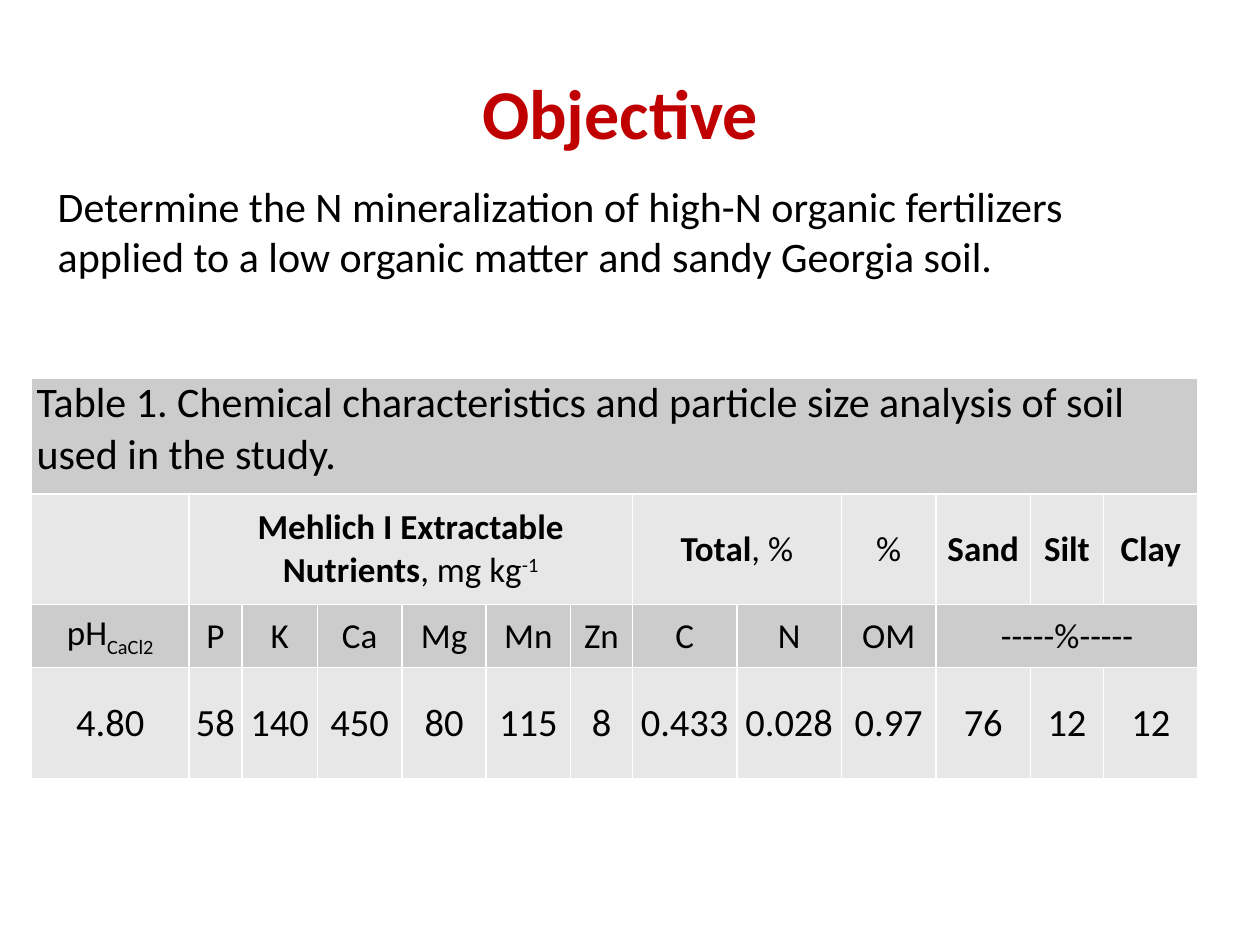
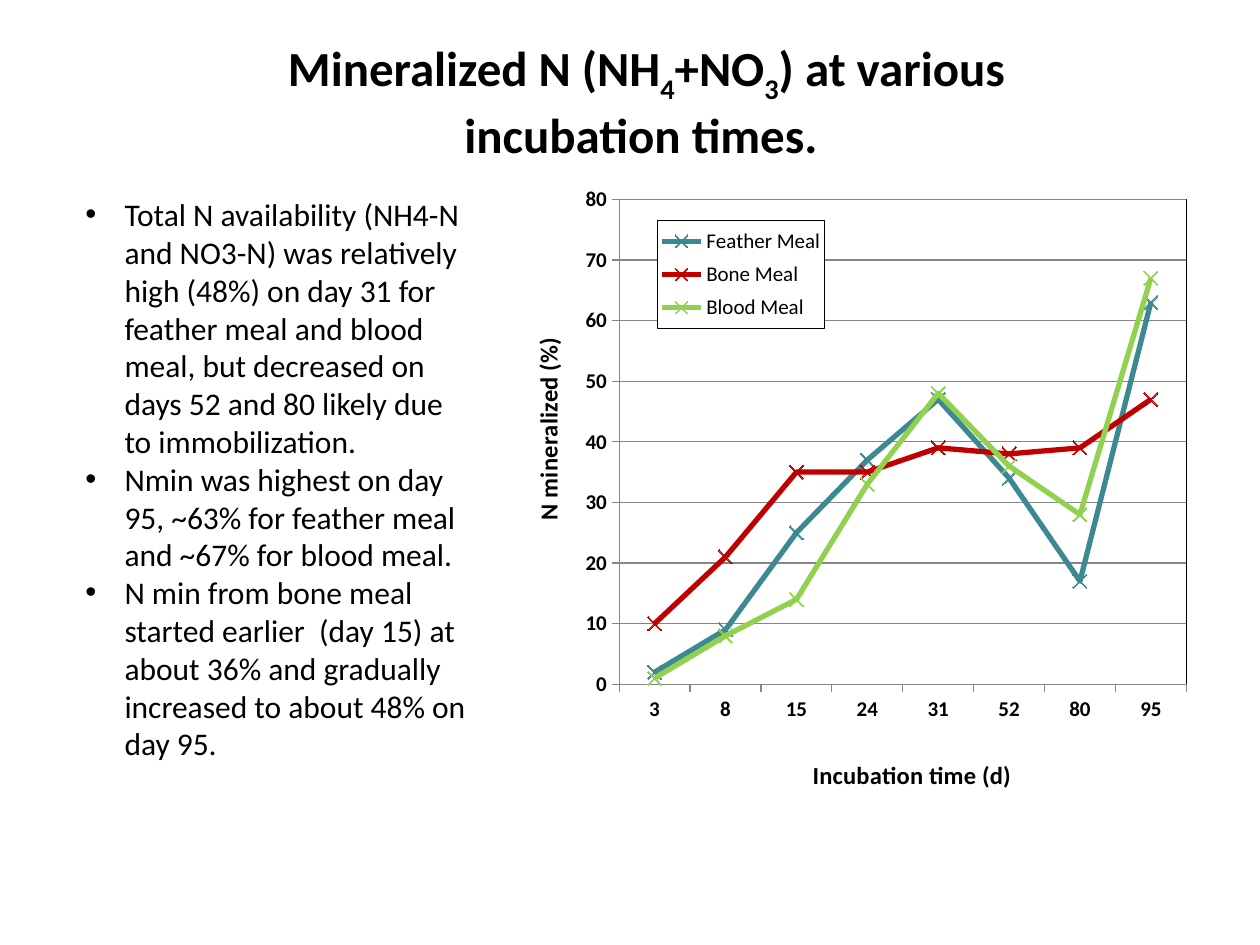
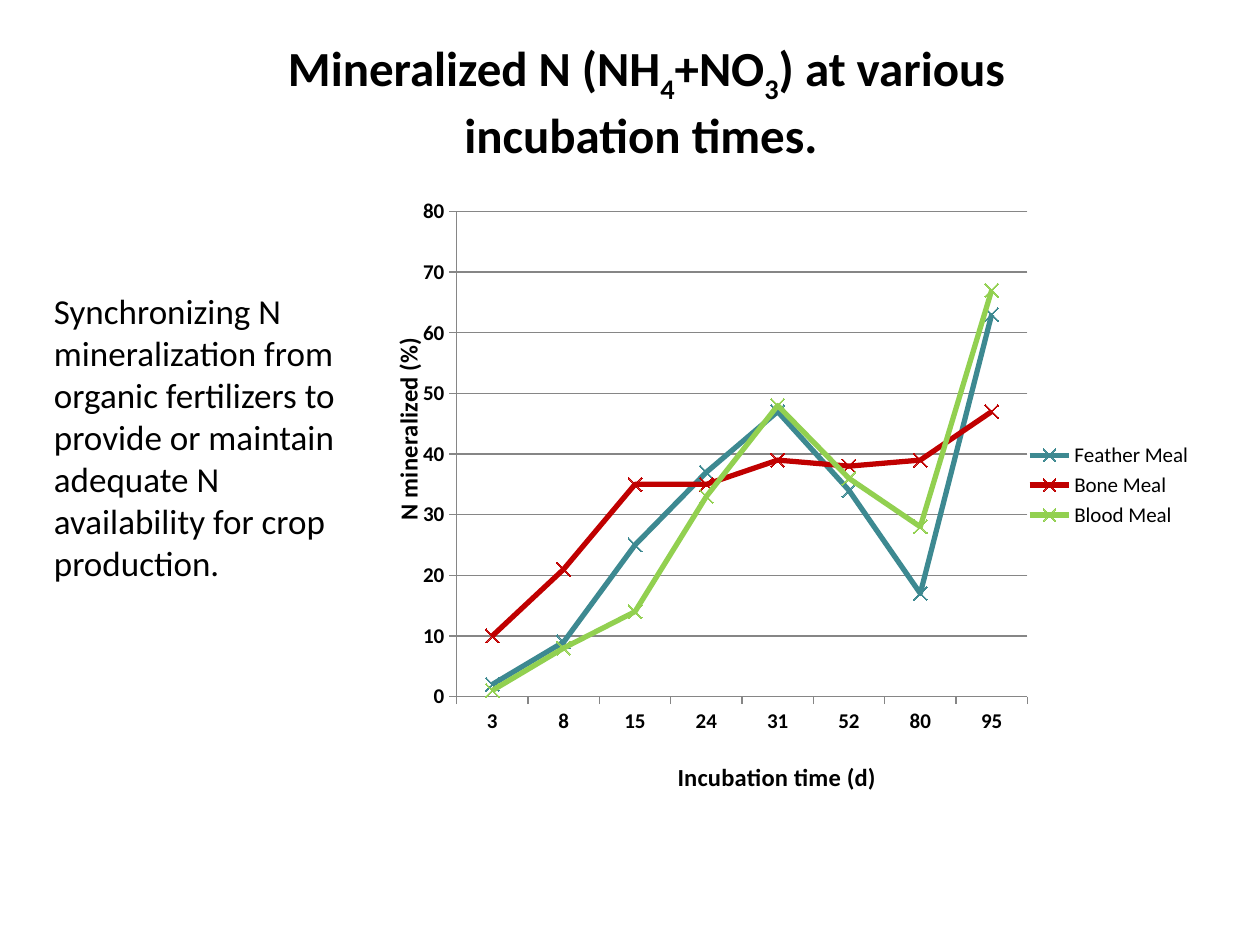
from dataclasses import dataclass
from typing import NamedTuple, Optional

from lxml import etree
from pptx import Presentation
from pptx.chart.data import CategoryChartData
from pptx.dml.color import RGBColor
from pptx.enum.chart import XL_CHART_TYPE, XL_LEGEND_POSITION, XL_MARKER_STYLE, XL_TICK_MARK
from pptx.enum.text import MSO_ANCHOR, MSO_AUTO_SIZE, PP_ALIGN
from pptx.oxml import parse_xml
from pptx.oxml.ns import qn
from pptx.util import Emu, Pt

PX = 9144  # 100 px to the inch
LINE_MARKERS = XL_CHART_TYPE.LINE_MARKERS
LEGEND_RIGHT = XL_LEGEND_POSITION.RIGHT
MARKER_X = XL_MARKER_STYLE.X
TICK_OUT, TICK_NONE = XL_TICK_MARK.OUTSIDE, XL_TICK_MARK.NONE
TOP, MIDDLE = MSO_ANCHOR.TOP, MSO_ANCHOR.MIDDLE
LEFT, CENTER = PP_ALIGN.LEFT, PP_ALIGN.CENTER
NO_AUTOFIT = MSO_AUTO_SIZE.NONE
TITLE_ONLY = 5
SUB, SUPER = -25, 30
NS = ('xmlns:a="http://schemas.openxmlformats.org/drawingml/2006/main" '
      'xmlns:c="http://schemas.openxmlformats.org/drawingml/2006/chart"')


@dataclass(frozen=True)
class Theme:
    font: str = "Calibri"
    ink: str = "000000"
    paper: str = "FFFFFF"
    accent: str = "C00000"
    band_dark: str = "CCCCCC"
    band_light: str = "E7E7E7"
    grid: str = "868686"
    feather: str = "3D8991"
    bone: str = "C00000"
    blood: str = "92D050"
    heading: int = 40
    title: int = 28
    lead: int = 24
    values: int = 22
    body: int = 20
    bullet: int = 18
    axis_title: int = 14
    axis: int = 12
    chart: int = 10


T = Theme()


class Box(NamedTuple):
    left: int
    top: int
    width: int
    height: int


class Run(NamedTuple):
    text: str
    bold: bool = False
    baseline: int = 0


class Cell(NamedTuple):
    runs: tuple[Run, ...]
    span: int = 1


class Row(NamedTuple):
    height: int
    fill: str
    size: int
    cells: list[Cell]
    align: PP_ALIGN = CENTER
    anchor: MSO_ANCHOR = MIDDLE


class Series(NamedTuple):
    name: str
    color: str
    values: tuple[int, ...]


class Layout(NamedTuple):
    """Place inside a chart, as fractions of its size."""
    x: float
    y: float
    w: Optional[float] = None
    h: Optional[float] = None


@dataclass(frozen=True)
class ChartSpec:
    box: Box
    plot: Layout
    days_title: Layout
    percent_title: Layout
    legend: Optional[Layout] = None  # a placed legend is framed, like its plot


def plain(text: str) -> tuple[Run, ...]:
    return (Run(text),)


def bold(text: str) -> tuple[Run, ...]:
    return (Run(text, True),)


def cells(*texts: str) -> list[Cell]:
    return [Cell(plain(t)) for t in texts]


PAGE_TITLE = (Run("Mineralized N (NH", True), Run("4", True, SUB), Run("+NO", True),
              Run("3", True, SUB), Run(") at various incubation times. ", True))
TITLE_BOX = Box(142, 25, 742, 104)

COLUMNS = (125, 42, 60, 67, 67, 67, 49, 83, 83, 75, 75, 58, 75)
SOIL_ROWS = [
    Row(92, T.band_dark, T.lead, [Cell(plain(
        "Table 1. Chemical characteristics and particle size analysis of soil "
        "used in the study."), len(COLUMNS))], LEFT, TOP),
    Row(88, T.band_light, T.body, [
        Cell(()),
        Cell((Run("Mehlich I Extractable Nutrients", True), Run(", mg kg"),
              Run("-1", baseline=SUPER)), 6),
        Cell((Run("Total", True), Run(", %")), 2),
        Cell(plain("%")),
        *(Cell(bold(t)) for t in ("Sand", "Silt", "Clay"))]),
    Row(50, T.band_dark, T.body, [
        Cell((Run("pH"), Run("CaCl2", baseline=SUB))),
        *cells("P", "K", "Ca", "Mg", "Mn", "Zn", "C", "N", "OM"),
        Cell(plain("-----%-----"), 3)]),
    Row(88, T.band_light, T.values, cells(
        "4.80", "58", "140", "450", "80", "115", "8", "0.433", "0.028", "0.97",
        "76", "12", "12")),
]

DAYS = ("3", "8", "15", "24", "31", "52", "80", "95")
MEALS = [
    Series("Feather Meal", T.feather, (2, 9, 25, 37, 47, 34, 17, 63)),
    Series("Bone Meal", T.bone, (10, 21, 35, 35, 39, 38, 39, 47)),
    Series("Blood Meal", T.blood, (1, 8, 14, 33, 48, 36, 28, 67)),
]

FINDINGS = [
    "Total N availability (NH4-N and NO3-N) was relatively high (48%) on day 31 for "
    "feather meal and blood meal, but decreased on days 52 and 80 likely due to "
    "immobilization.",
    "Nmin was highest on day 95, ~63% for feather meal and ~67% for blood meal.",
    "N min from bone meal started earlier  (day 15) at about 36% and gradually "
    "increased to about 48% on day 95.",
]


def rgb(color: str) -> RGBColor:
    return RGBColor.from_string(color)


def style_font(font, size: int, color: str = T.ink, is_bold: bool = False) -> None:
    for name, value in {"name": T.font, "size": Pt(size), "bold": is_bold}.items():
        setattr(font, name, value)
    font.color.rgb = rgb(color)


def style_line(line, color: str, width: float) -> None:
    line.color.rgb = rgb(color)
    line.width = Pt(width)


def write_runs(p, runs: tuple[Run, ...], size: int, color: str = T.ink,
               align: PP_ALIGN = LEFT) -> None:
    p.alignment = align
    for run in runs:
        r = p.add_run()
        r.text = run.text
        style_font(r.font, size, color, run.bold)
        if run.baseline:
            r._r.get_or_add_rPr().set("baseline", str(run.baseline * 1000))


def emu(box: Box) -> list[Emu]:
    return [Emu(v * PX) for v in box]


def add_title_slide(prs, box: Box, runs: tuple[Run, ...], size: int, color: str = T.ink):
    """Add a title-only slide and place its title."""
    s = prs.slides.add_slide(prs.slide_layouts[TITLE_ONLY])
    title = s.shapes.title
    for name, value in zip(("left", "top", "width", "height"), emu(box)):
        setattr(title, name, value)
    tf = title.text_frame
    for name, value in {"auto_size": NO_AUTOFIT, "vertical_anchor": TOP,
                        "word_wrap": True}.items():
        setattr(tf, name, value)
    write_runs(tf.paragraphs[0], runs, size, color, CENTER)
    return s


def add_bullet(p) -> None:
    pPr = p._p.get_or_add_pPr()
    indent = 31 * PX
    pPr.set("marL", str(indent))
    pPr.set("indent", str(-indent))
    etree.SubElement(pPr, qn("a:buFont")).set("typeface", "Arial")
    etree.SubElement(pPr, qn("a:buChar")).set("char", "•")


def add_text(s, box: Box, texts: list[str], size: int, bullets: bool = False) -> None:
    tf = s.shapes.add_textbox(*emu(box)).text_frame
    tf.word_wrap = True
    for i, text in enumerate(texts):
        p = tf.add_paragraph() if i else tf.paragraphs[0]
        if bullets:
            add_bullet(p)
        write_runs(p, plain(text), size)


def style_cell(cell, fill: str) -> None:
    cell.margin_left = cell.margin_right = Emu(4 * PX)
    cell.margin_top = cell.margin_bottom = 0
    tcPr = cell._tc.get_or_add_tcPr()
    for side in ("lnL", "lnR", "lnT", "lnB"):
        tcPr.append(parse_xml(
            f'<a:{side} {NS} w="12700"><a:solidFill><a:srgbClr val="{T.paper}"/>'
            f'</a:solidFill></a:{side}>'))
    cell.fill.solid()
    cell.fill.fore_color.rgb = rgb(fill)


def add_table(s, left: int, top: int, columns: tuple[int, ...], rows: list[Row]) -> None:
    box = Box(left, top, sum(columns), sum(row.height for row in rows))
    table = s.shapes.add_table(len(rows), len(columns), *emu(box)).table
    table.first_row = table.horz_banding = False
    for column, width in zip(table.columns, columns):
        column.width = Emu(width * PX)
    for i, row in enumerate(rows):
        table.rows[i].height = Emu(row.height * PX)
        for j in range(len(columns)):
            style_cell(table.cell(i, j), row.fill)
        j = 0
        for item in row.cells:
            cell = table.cell(i, j)
            if item.span > 1:
                cell.merge(table.cell(i, j + item.span - 1))
            cell.vertical_anchor = row.anchor
            write_runs(cell.text_frame.paragraphs[0], item.runs, row.size,
                       align=row.align)
            j += item.span


def set_layout(parent, index: int, layout: Layout, inner: bool = False) -> None:
    """Give a chart part a manual layout as its child at index."""
    for old in parent.findall(qn("c:layout")):
        parent.remove(old)
    target = '<c:layoutTarget val="inner"/>' if inner else ""
    modes = '<c:xMode val="edge"/><c:yMode val="edge"/>'
    lengths = "".join(f'<c:{name} val="{value}"/>'
                      for name, value in layout._asdict().items() if value is not None)
    parent.insert(index, parse_xml(
        f'<c:layout {NS}><c:manualLayout>{target}{modes}{lengths}'
        f'</c:manualLayout></c:layout>'))


def frame(fill: str):
    return parse_xml(
        f'<c:spPr {NS}>{fill}<a:ln w="9525"><a:solidFill>'
        f'<a:srgbClr val="{T.ink}"/></a:solidFill></a:ln></c:spPr>')


def style_axis(axis, title: str, layout: Layout, rotation: int = 0) -> None:
    tf = axis.axis_title.text_frame
    write_runs(tf.paragraphs[0], bold(title), T.axis_title, align=CENTER)
    tf._txBody.bodyPr.set("rot", str(rotation * 60000))
    set_layout(axis.axis_title._element, 1, layout)
    style_font(axis.tick_labels.font, T.axis, is_bold=True)
    style_line(axis.format.line, T.grid, 0.75)
    axis.major_tick_mark, axis.minor_tick_mark = TICK_OUT, TICK_NONE


def add_meal_chart(s, spec: ChartSpec) -> None:
    data = CategoryChartData(number_format="0")
    data.categories = DAYS
    for meal in MEALS:
        data.add_series(meal.name, meal.values)
    chart = s.shapes.add_chart(LINE_MARKERS, *emu(spec.box), data).chart
    chart.has_title = False
    style_font(chart.font, T.chart)
    plot = chart.plots[0]
    plot.vary_by_categories = False

    for series, meal in zip(plot.series, MEALS):
        series.smooth = False
        style_line(series.format.line, meal.color, 3)
        marker = series.marker
        marker.style, marker.size = MARKER_X, 8
        marker.format.fill.background()
        style_line(marker.format.line, meal.color, 0.75)

    style_axis(chart.category_axis, "Incubation time (d)", spec.days_title)
    axis = chart.value_axis
    style_axis(axis, "N mineralized (%)", spec.percent_title, -90)
    for name, value in {"minimum_scale": 0, "maximum_scale": 80, "major_unit": 10,
                        "has_major_gridlines": True}.items():
        setattr(axis, name, value)
    style_line(axis.major_gridlines.format.line, T.grid, 0.75)
    axis.tick_labels.number_format = "0"
    axis.tick_labels.number_format_is_linked = False

    chart.has_legend = True
    legend = chart.legend
    legend.position = LEGEND_RIGHT
    legend.include_in_layout = False
    style_font(legend.font, T.axis)

    plot_area = chart._chartSpace.chart.plotArea
    set_layout(plot_area, 0, spec.plot, inner=True)
    if spec.legend:
        set_layout(legend._element, 1, spec.legend)
        paper = f'<a:solidFill><a:srgbClr val="{T.paper}"/></a:solidFill>'
        legend._element.find(qn("c:overlay")).addnext(frame(paper))
        plot_area.append(frame("<a:noFill/>"))


def build_objective(prs) -> None:
    s = add_title_slide(prs, Box(36, 50, 912, 78), bold("Objective"), T.heading, T.accent)
    add_text(s, Box(36, 138, 912, 91), [
        "Determine the N mineralization of high-N organic fertilizers applied to a low "
        "organic matter and sandy Georgia soil."], T.lead)
    add_table(s, 25, 300, COLUMNS, SOIL_ROWS)


def build_findings(prs) -> None:
    s = add_title_slide(prs, TITLE_BOX, PAGE_TITLE, T.title)
    add_meal_chart(s, ChartSpec(
        Box(308, 129, 667, 512), Layout(0.275, 0.057, 0.675, 0.752),
        Layout(0.5, 0.916), Layout(0.165, 0.264), Layout(0.321, 0.09, 0.198, 0.167)))
    add_text(s, Box(58, 150, 325, 464), FINDINGS, T.bullet, bullets=True)


def build_conclusion(prs) -> None:
    s = add_title_slide(prs, TITLE_BOX, PAGE_TITLE, T.title)
    add_meal_chart(s, ChartSpec(
        Box(286, 129, 671, 512), Layout(0.114, 0.076, 0.675, 0.752),
        Layout(0.37, 0.919), Layout(0.031, 0.264)))
    add_text(s, Box(33, 225, 253, 246), [
        "Synchronizing N mineralization from organic fertilizers to provide or maintain "
        "adequate N availability for crop production."], T.body)


def main() -> None:
    prs = Presentation()
    prs.slide_width, prs.slide_height = Emu(1000 * PX), Emu(750 * PX)
    for build in (build_objective, build_findings, build_conclusion):
        build(prs)
    prs.save("out.pptx")


if __name__ == "__main__":
    main()
